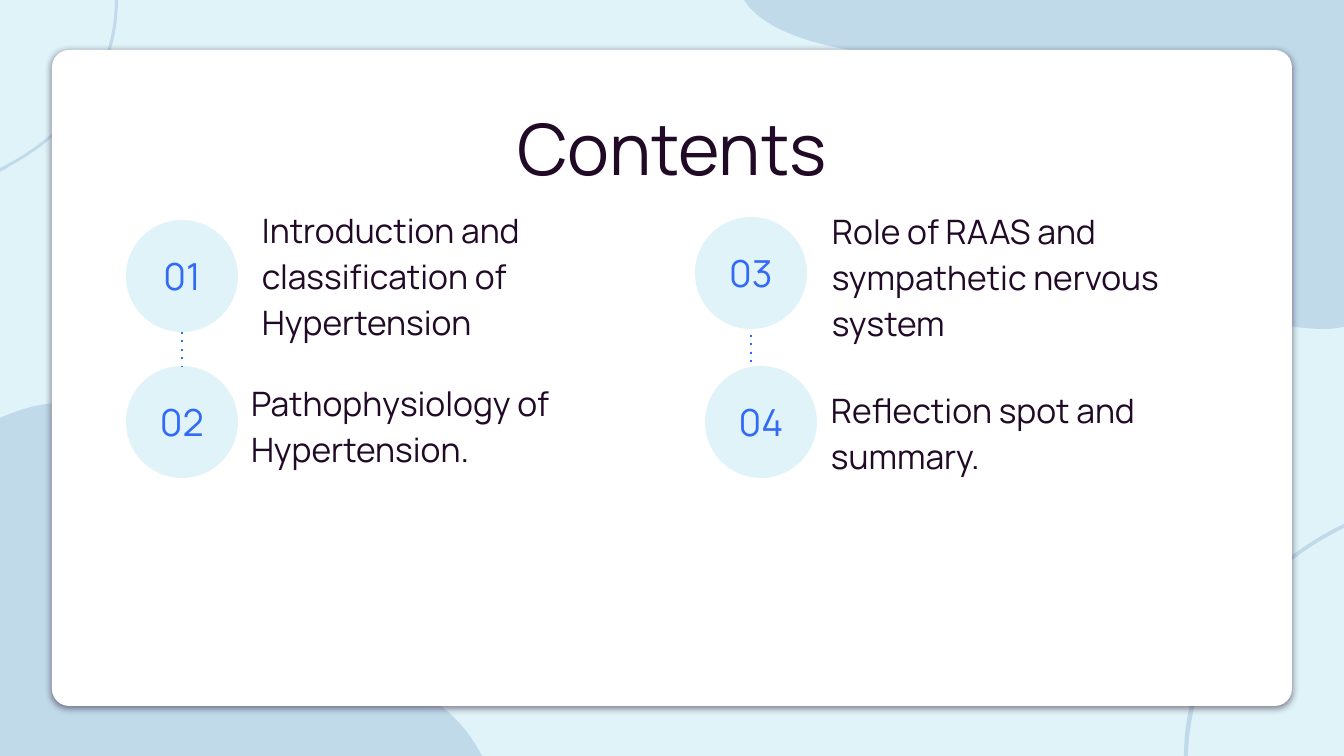
from dataclasses import dataclass

from lxml.etree import SubElement
from pptx import Presentation
from pptx.dml.color import RGBColor
from pptx.enum.shapes import MSO_CONNECTOR, MSO_SHAPE
from pptx.enum.text import MSO_ANCHOR, PP_ALIGN
from pptx.oxml import parse_xml
from pptx.oxml.ns import nsdecls, qn
from pptx.util import Emu, Pt

SLIDE_W, SLIDE_H = 1344, 756
EMU_PER_PX = 12192000 / SLIDE_W
CIRCLE = 112
INSET = 13
COLORS = {"ice": "DFF3F8", "wave": "A0BFDB", "card": "FFFFFF", "ink": "210A26", "accent": "3169F8"}

Box = tuple[int, int, int, int]


@dataclass(frozen=True)
class Topic:
    number: str
    label: str
    circle_at: tuple[int, int]
    label_box: Box


@dataclass(frozen=True)
class Wave:
    """Outline whose steps are one end point, or two controls and an end point."""
    start: tuple[int, int]
    steps: list[tuple[int, ...]]


TOPICS = [
    Topic("01", "Introduction and classification of Hypertension", (126, 220), (249, 217, 446, 112)),
    Topic("02", "Pathophysiology of Hypertension.", (126, 366), (238, 358, 478, 130)),
    Topic("03", "Role of RAAS and sympathetic nervous system", (695, 217), (819, 208, 434, 132)),
    Topic("04", "Reflection spot and summary.", (705, 366), (818, 374, 469, 112)),
]
DOTTED_LINKS = [(182, 332, 366), (751, 335, 364)]
WAVES = [
    Wave((1188, 756), [
        (1189, 708, 1206, 658, 1235, 619), (1263, 580, 1301, 549, 1344, 528), (1344, 524),
        (1340, 526, 1335, 528, 1330, 531), (1295, 550, 1263, 577, 1238, 608),
        (1213, 641, 1194, 678, 1187, 720), (1185, 732, 1184, 744, 1184, 756)]),
    Wave((60, 403), [
        (31, 403, 0, 418, 0, 418), (0, 756), (482, 756), (420, 634, 230, 657, 150, 633),
        (72, 610, 158, 493, 116, 430), (101, 409, 81, 403, 60, 403)]),
    Wave((744, 0), [
        (766, 35, 839, 58, 957, 58), (961, 58, 966, 58, 970, 58), (971, 58, 973, 58, 975, 58),
        (1151, 58, 1078, 215, 1209, 296), (1244, 319, 1289, 329, 1325, 329),
        (1332, 329, 1338, 328, 1344, 327), (1344, 0)]),
    Wave((115, 0), [
        (115, 36, 103, 73, 82, 102), (60, 130, 31, 153, 0, 168), (0, 172),
        (4, 170, 7, 168, 10, 166), (36, 152, 60, 133, 79, 110),
        (98, 86, 111, 58, 116, 27), (117, 18, 118, 9, 118, 0)]),
]


def px(length: int) -> Emu:
    return Emu(round(length * EMU_PER_PX))


def color(key: str) -> RGBColor:
    return RGBColor.from_string(COLORS[key])


def paint(shape, key: str) -> None:
    """Give a plain fill, without line or shadow."""
    shape.shadow.inherit = False
    shape.fill.solid()
    shape.fill.fore_color.rgb = color(key)
    shape.line.fill.background()


def bend(shape, steps: list[tuple[int, ...]]) -> None:
    """Join the straight segments of each three-point step into one cubic curve."""
    segments = iter(list(shape._element.iter(qn("a:lnTo"))))
    for step in steps:
        first, *others = [next(segments) for _ in range(len(step) // 2)]
        if others:
            first.tag = qn("a:cubicBezTo")
        for segment in others:
            first.append(segment[0])
            segment.getparent().remove(segment)


def add_wave(slide, wave: Wave) -> None:
    corners = [(px(x), px(y)) for step in wave.steps for x, y in zip(step[::2], step[1::2])]
    builder = slide.shapes.build_freeform(*map(px, wave.start))
    builder.add_line_segments(corners, close=True)
    shape = builder.convert_to_shape()
    bend(shape, wave.steps)
    paint(shape, "wave")
    wave_color = shape._element.spPr.find(qn("a:solidFill"))[0]
    SubElement(wave_color, qn("a:alpha")).set("val", "48000")


def add_card(slide, box: Box) -> None:
    card = slide.shapes.add_shape(MSO_SHAPE.ROUNDED_RECTANGLE, *map(px, box))
    card.adjustments[0] = 0.026
    paint(card, "card")
    effects = card._element.spPr.find(qn("a:effectLst"))
    effects.append(parse_xml(
        f'<a:outerShdw {nsdecls("a")} blurRad="{Pt(4.5)}" dist="{Pt(1.5)}" dir="5400000" '
        f'algn="bl" rotWithShape="0"><a:srgbClr val="{COLORS["ink"]}">'
        '<a:alpha val="50000"/></a:srgbClr></a:outerShdw>'))


def write(shape, text: str, *, size: float, ink: str = "ink", align: PP_ALIGN = PP_ALIGN.LEFT,
          anchor: MSO_ANCHOR = MSO_ANCHOR.MIDDLE, spacing: float = 1.15) -> None:
    frame = shape.text_frame
    frame.word_wrap = True
    frame.vertical_anchor = anchor
    frame.margin_left = frame.margin_right = frame.margin_top = frame.margin_bottom = px(INSET)
    paragraph = frame.paragraphs[0]
    paragraph.alignment = align
    paragraph.line_spacing = spacing
    run = paragraph.add_run()
    run.text = text
    run.font.name = "Manrope"
    run.font.size = Pt(size)
    run.font.color.rgb = color(ink)


def add_topic(slide, topic: Topic) -> None:
    label = slide.shapes.add_textbox(*map(px, topic.label_box))
    write(label, topic.label, size=24)
    circle = slide.shapes.add_shape(MSO_SHAPE.OVAL, *map(px, (*topic.circle_at, CIRCLE, CIRCLE)))
    paint(circle, "ice")
    write(circle, topic.number, size=26.6, ink="accent", align=PP_ALIGN.CENTER, spacing=1.0)


def add_dotted_link(slide, x: int, top: int, bottom: int) -> None:
    link = slide.shapes.add_connector(MSO_CONNECTOR.STRAIGHT, px(x), px(top), px(x), px(bottom))
    link.line.color.rgb = color("accent")
    link.line.width = Pt(1.5)
    outline = link._element.spPr.find(qn("a:ln"))
    SubElement(outline, qn("a:prstDash")).set("val", "dot")
    SubElement(link._element.spPr, qn("a:effectLst"))


def main() -> None:
    deck = Presentation()
    deck.slide_width, deck.slide_height = px(SLIDE_W), px(SLIDE_H)
    slide = deck.slides.add_slide(deck.slide_layouts[6])
    slide.background.fill.solid()
    slide.background.fill.fore_color.rgb = color("ice")

    for wave in WAVES:
        add_wave(slide, wave)
    add_card(slide, (52, 50, 1240, 656))

    title = slide.shapes.add_textbox(*map(px, (105, 79, 1134, 105)))
    write(title, "Contents", size=50.6, align=PP_ALIGN.CENTER, anchor=MSO_ANCHOR.TOP)
    for topic in TOPICS:
        add_topic(slide, topic)
    for x, top, bottom in DOTTED_LINKS:
        add_dotted_link(slide, x, top, bottom)

    deck.save("out.pptx")


if __name__ == "__main__":
    main()
